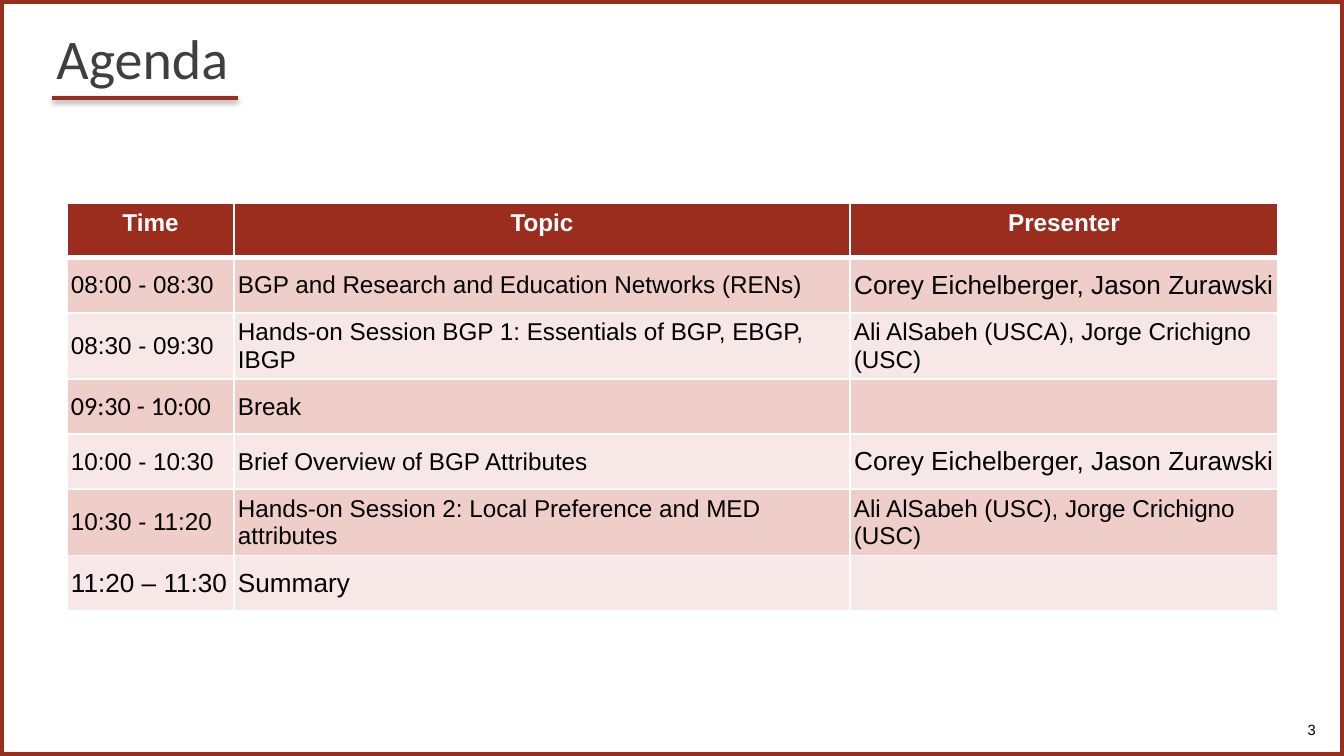
from lxml.etree import SubElement
from pptx import Presentation
from pptx.dml.color import RGBColor
from pptx.enum.shapes import MSO_CONNECTOR, MSO_SHAPE
from pptx.enum.text import MSO_ANCHOR as Anchor, MSO_AUTO_SIZE as AutoSize, PP_ALIGN as Align
from pptx.oxml import parse_xml
from pptx.oxml.ns import nsdecls, qn
from pptx.util import Emu, Pt

COLORS = {"accent": "9B2D1F", "title": "3F3F3F", "text": "000000", "white": "FFFFFF",
          "dark band": "EFCECA", "light band": "F7E8E7"}

TITLE = "Agenda"
SLIDE_NUMBER = "3"
HEADERS = ("Time", "Topic", "Presenter")
SESSIONS = [
    ("08:00 - 08:30", "BGP and Research and Education Networks (RENs)",
     "Corey Eichelberger, Jason Zurawski"),
    ("08:30 - 09:30", "Hands-on Session BGP 1: Essentials of BGP, EBGP, IBGP",
     "Ali AlSabeh (USCA), Jorge Crichigno (USC)"),
    ("09:30 - 10:00", "Break", ""),
    ("10:00 - 10:30", "Brief Overview of BGP Attributes",
     "Corey Eichelberger, Jason Zurawski"),
    ("10:30 - 11:20", "Hands-on Session 2: Local Preference and MED attributes",
     "Ali AlSabeh (USC), Jorge Crichigno (USC)"),
    ("11:20 – 11:30", "Summary", ""),
]
# Cells that differ from the 13 pt Arial, left-aligned body: (row, column)
LEAD_PRESENTER = {"size": 14, "align": Align.CENTER}
CELL_FORMATS = {
    (1, 2): LEAD_PRESENTER,
    (3, 0): {"size": 14, "font": "Calibri"},
    (4, 2): LEAD_PRESENTER,
    (6, 0): {"size": 14},
    (6, 1): {"size": 14},
}

SLIDE_SIZE = (1344, 756)
TITLE_BOX = (43, 0, 1301, 98)
NUMBER_BOX = (1184, 710, 145, 40)
UNDERLINE = (52, 98, 238, 98)
TABLE_ORIGIN = (67, 203)
COLUMN_WIDTHS = (167, 616, 428)
ROW_HEIGHT = 55


def px(*lengths):
    return [Emu(round(length * 914400 / 134.4)) for length in lengths]


def color(name):
    return RGBColor.from_string(COLORS[name])


def write(frame, text, size, color_name, font="Arial", align=Align.LEFT, bold=False):
    paragraph = frame.paragraphs[0]
    paragraph.alignment = align
    if not text:
        paragraph.font.size = Pt(size)
        return paragraph
    run = paragraph.add_run()
    run.text = text
    for name, value in {"size": Pt(size), "name": font, "bold": bold}.items():
        setattr(run.font, name, value)
    run.font.color.rgb = color(color_name)
    return paragraph


def add_borders(cell, bottom_width):
    properties = cell._tc.get_or_add_tcPr()
    for side, width in {"L": 1, "R": 1, "T": 1, "B": bottom_width}.items():
        line = SubElement(properties, qn(f"a:ln{side}"), w=str(Pt(width)))
        fill = SubElement(line, qn("a:solidFill"))
        SubElement(fill, qn("a:srgbClr"), val=COLORS["white"])


def add_frame(slide):
    frame = slide.shapes.add_shape(MSO_SHAPE.RECTANGLE, *px(0, 0, *SLIDE_SIZE))
    frame.shadow.inherit = False
    frame.fill.background()
    frame.line.color.rgb = color("accent")
    frame.line.width = Pt(4.5)


def add_title(slide):
    title = slide.shapes.title
    title.left, title.top, title.width, title.height = px(*TITLE_BOX)
    title.text_frame.auto_size = AutoSize.NONE
    title.text_frame.vertical_anchor = Anchor.BOTTOM
    paragraph = write(title.text_frame, TITLE, 30, "title", "Calibri")
    paragraph.line_spacing = 0.85

    underline = slide.shapes.add_connector(MSO_CONNECTOR.STRAIGHT, *px(*UNDERLINE))
    underline.line.color.rgb = color("accent")
    underline.line.width = Pt(2)
    underline._element.spPr.append(parse_xml(
        f'<a:effectLst {nsdecls("a")}>'
        f'<a:outerShdw blurRad="{Pt(3.1)}" dist="{Pt(1.6)}" dir="5400000" rotWithShape="0">'
        f'<a:srgbClr val="{COLORS["text"]}"><a:alpha val="38000"/></a:srgbClr>'
        '</a:outerShdw></a:effectLst>'))


def add_slide_number(slide):
    frame = slide.shapes.add_textbox(*px(*NUMBER_BOX)).text_frame
    frame.word_wrap = True
    frame.vertical_anchor = Anchor.MIDDLE
    write(frame, SLIDE_NUMBER, 7.9, "text", align=Align.RIGHT)


def add_agenda(slide):
    rows = [HEADERS, *SESSIONS]
    size = (sum(COLUMN_WIDTHS), ROW_HEIGHT * len(rows))
    table = slide.shapes.add_table(len(rows), len(HEADERS), *px(*TABLE_ORIGIN, *size)).table
    for column, width in zip(table.columns, px(*COLUMN_WIDTHS)):
        column.width = width
    for row_index, texts in enumerate(rows):
        is_header = row_index == 0
        band = "accent" if is_header else "dark band" if row_index % 2 else "light band"
        for column_index, text in enumerate(texts):
            cell = table.cell(row_index, column_index)
            add_borders(cell, bottom_width=3 if is_header else 1)
            cell.fill.solid()
            cell.fill.fore_color.rgb = color(band)
            if is_header:
                write(cell.text_frame, text, 13, "white", align=Align.CENTER, bold=True)
                continue
            cell.vertical_anchor = Anchor.MIDDLE
            for side in ("left", "top", "right", "bottom"):
                setattr(cell, f"margin_{side}", px(4)[0])
            cell_format = {"size": 13, **CELL_FORMATS.get((row_index, column_index), {})}
            write(cell.text_frame, text, color_name="text", **cell_format)


def main():
    presentation = Presentation()
    presentation.slide_width, presentation.slide_height = px(*SLIDE_SIZE)
    slide = presentation.slides.add_slide(presentation.slide_layouts[5])
    add_frame(slide)
    add_slide_number(slide)
    add_title(slide)
    add_agenda(slide)
    presentation.save("out.pptx")


if __name__ == "__main__":
    main()
